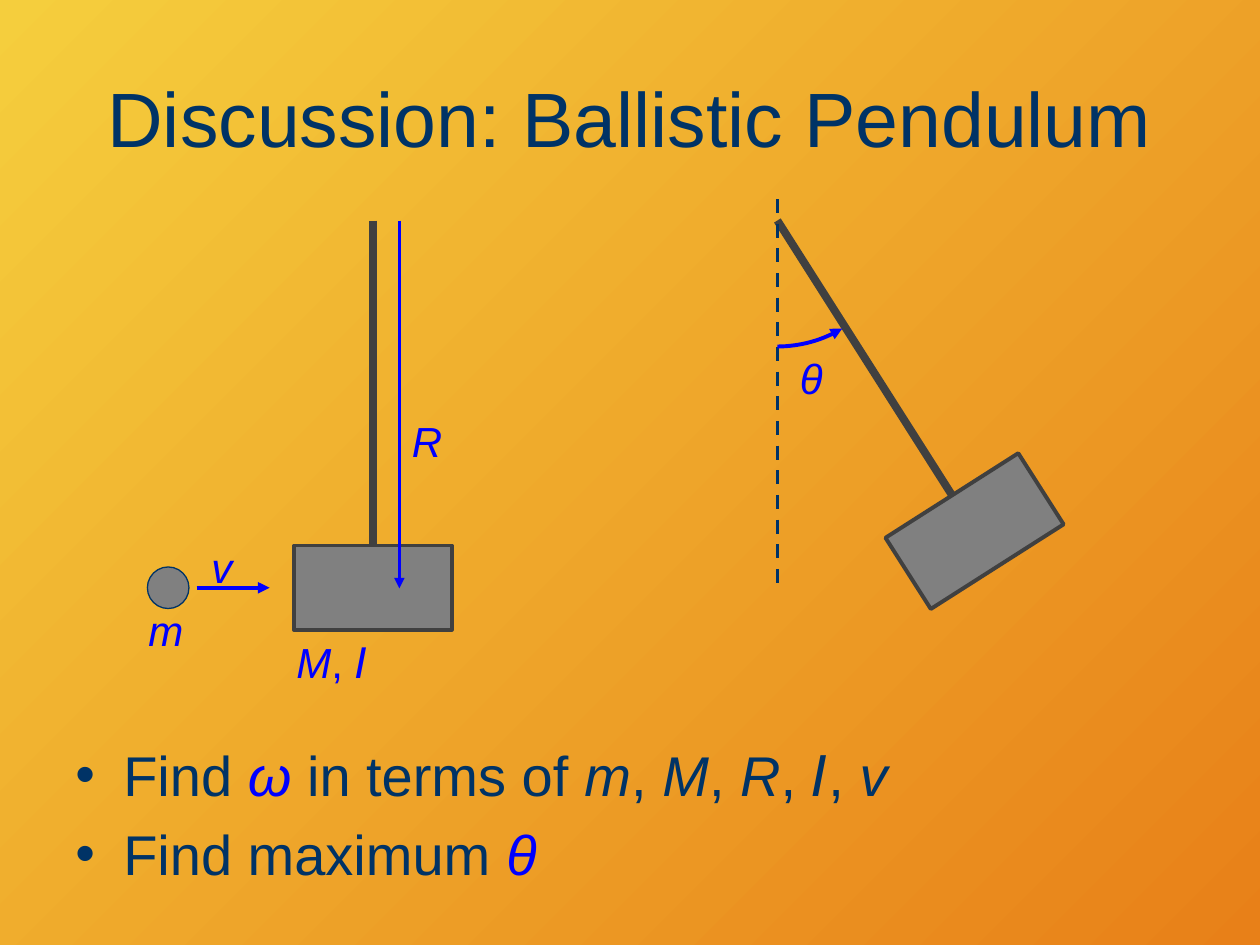
import math

import lxml.etree
import pptx
import pptx.dml.color
import pptx.enum.dml
import pptx.enum.shapes
import pptx.enum.text
import pptx.oxml.ns
import pptx.util

Inches, Pt = pptx.util.Inches, pptx.util.Pt
SHAPE = pptx.enum.shapes.MSO_SHAPE
NAVY, BLUE, GRAY, DARK = "003366", "0000FF", "808080", "404040"
BLOCK_W, BLOCK_H = 1.25, 0.67


def rgb(value):
    return pptx.dml.color.RGBColor.from_string(value)


def sub(parent, tag, **attrs):
    return lxml.etree.SubElement(parent, pptx.oxml.ns.qn(tag), attrs)


def style_line(line, color, width):
    line.color.rgb = rgb(color)
    line.width = Pt(width)


def add_arrowhead(sp):
    sub(sp.line._get_or_add_ln(), "a:tailEnd", type="triangle")


def add_line(s, x1, y1, x2, y2, color, width, arrow=False, dash=False):
    sp = s.shapes.add_connector(pptx.enum.shapes.MSO_CONNECTOR.STRAIGHT,
                                Inches(x1), Inches(y1), Inches(x2), Inches(y2))
    style_line(sp.line, color, width)
    if dash:
        sp.line.dash_style = pptx.enum.dml.MSO_LINE.DASH
    if arrow:
        add_arrowhead(sp)
    sub(sp._element.spPr, "a:effectLst")


def add_solid(s, kind, x, y, w, h, line, width, rotation=0):
    sp = s.shapes.add_shape(kind, Inches(x), Inches(y), Inches(w), Inches(h))
    sp.shadow.inherit = False
    sp.fill.solid()
    sp.fill.fore_color.rgb = rgb(GRAY)
    style_line(sp.line, line, width)
    sp.rotation = rotation


def add_text_box(s, x, y, w, h):
    tf = s.shapes.add_textbox(Inches(x), Inches(y), Inches(w), Inches(h)).text_frame
    tf.word_wrap = True
    return tf


def add_run(p, text, size, color, italic=False, font="Arial"):
    r = p.add_run()
    r.text = text
    r.font.size = Pt(size)
    r.font.name = font
    r.font.italic = italic
    r.font.color.rgb = rgb(color)


def add_label(s, x, y, w, text):
    p = add_text_box(s, x, y, w, 0.5).paragraphs[0]
    add_run(p, text, 24, BLUE, True)
    return p


def add_title(s, x, y, w, h):
    tf = add_text_box(s, x, y, w, h)
    tf.vertical_anchor = pptx.enum.text.MSO_ANCHOR.MIDDLE
    p = tf.paragraphs[0]
    p.alignment = pptx.enum.text.PP_ALIGN.CENTER
    add_run(p, "Discussion: Ballistic Pendulum", 44, NAVY)


def add_resting_pendulum(s, x, y):
    """Pendulum hanging from the pivot (x, y)."""
    block_x, block_y = x - BLOCK_W / 2, y + 2.58
    add_line(s, x, y, x, y + 2.67, DARK, 4.5)
    add_solid(s, SHAPE.RECTANGLE, block_x, block_y, BLOCK_W, BLOCK_H, DARK, 2.25)
    p = add_label(s, block_x - 0.08, block_y + BLOCK_H, 1.5, "M")
    add_run(p, ", ", 24, BLUE)
    add_run(p, "I", 24, BLUE, True, "DejaVu Sans")
    # Radius from the pivot to the block's centre
    add_line(s, x + 0.21, y, x + 0.21, y + 2.92, BLUE, 1.5, arrow=True)
    add_label(s, x + 0.21, y + 1.5, 0.43, "R")


def add_bullet_ball(s, x, y):
    """Incoming ball with its velocity; (x, y) is the ball's top left."""
    size = 0.33
    mid = y + size / 2
    add_solid(s, SHAPE.OVAL, x, y, size, size, NAVY, 0.75)
    add_line(s, x + 0.39, mid, x + 0.97, mid, BLUE, 2.25, arrow=True)
    add_label(s, x + 0.41, y - 0.25, 0.43, "v")
    add_label(s, x - 0.09, y + 0.25, 0.68, "m")


def add_swung_pendulum(s, x, y):
    """Pendulum deflected by theta about the pivot (x, y)."""
    add_line(s, x, y, x + 1.43, y + 2.25, DARK, 4.5)
    add_solid(s, SHAPE.RECTANGLE, x + 0.94, y + 2.13, BLOCK_W, BLOCK_H,
              DARK, 2.25, rotation=327.5)
    # Vertical reference and angle
    add_line(s, x, y - 0.17, x, y + 2.92, NAVY, 2, dash=True)
    add_label(s, x + 0.08, y + 1, 0.43, "θ")
    radius, sweep, steps = 1, 31, 16
    angles = [math.radians(sweep * i / steps) for i in range(steps + 1)]
    points = [(Inches(x + radius * math.sin(a)), Inches(y + radius * math.cos(a)))
              for a in angles]
    fb = s.shapes.build_freeform(*points[0])
    fb.add_line_segments(points[1:], close=False)
    sp = fb.convert_to_shape()
    sp.shadow.inherit = False
    sp.fill.background()
    style_line(sp.line, BLUE, 2.25)
    add_arrowhead(sp)


def add_questions(s, x, y, w, h):
    plain, italic = (NAVY, False), (NAVY, True)
    unknown = (BLUE, True)
    questions = [
        [("Find ", *plain), ("ω", *unknown), (" in terms of ", *plain),
         ("m", *italic), (", ", *plain), ("M", *italic), (", ", *plain),
         ("R", *italic), (", ", *plain), ("I", *italic, "DejaVu Sans"),
         (", ", *plain), ("v", *italic)],
        [("Find maximum ", *plain), ("θ", *unknown)],
    ]
    tf = add_text_box(s, x, y, w, h)
    for i, runs in enumerate(questions):
        p = tf.paragraphs[0] if i == 0 else tf.add_paragraph()
        pPr = p._p.get_or_add_pPr()
        pPr.set("marL", str(Inches(0.38)))
        pPr.set("indent", str(-Inches(0.38)))
        sub(sub(pPr, "a:spcBef"), "a:spcPct", val="20000")
        sub(sub(pPr, "a:buClr"), "a:srgbClr", val=NAVY)
        sub(pPr, "a:buFont", typeface="Arial")
        sub(pPr, "a:buChar", char="•")
        for text, *style in runs:
            add_run(p, text, 32, *style)


def main():
    prs = pptx.Presentation()
    prs.slide_width, prs.slide_height = Inches(10), Inches(7.5)
    s = prs.slides.add_slide(prs.slide_layouts[6])

    # Diagonal gradient background
    fill = s.background.fill
    fill.gradient()
    fill.gradient_angle = 315
    for stop, color in zip(fill.gradient_stops, ("F5CE3D", "E88018")):
        stop.color.rgb = rgb(color)

    add_title(s, 0.5, 0.3, 9, 1.25)
    add_questions(s, 0.5, 5.83, 8.92, 1.33)
    add_resting_pendulum(s, 2.96, 1.75)
    add_swung_pendulum(s, 6.17, 1.75)
    add_bullet_ball(s, 1.17, 4.5)
    prs.save("out.pptx")


if __name__ == "__main__":
    main()
